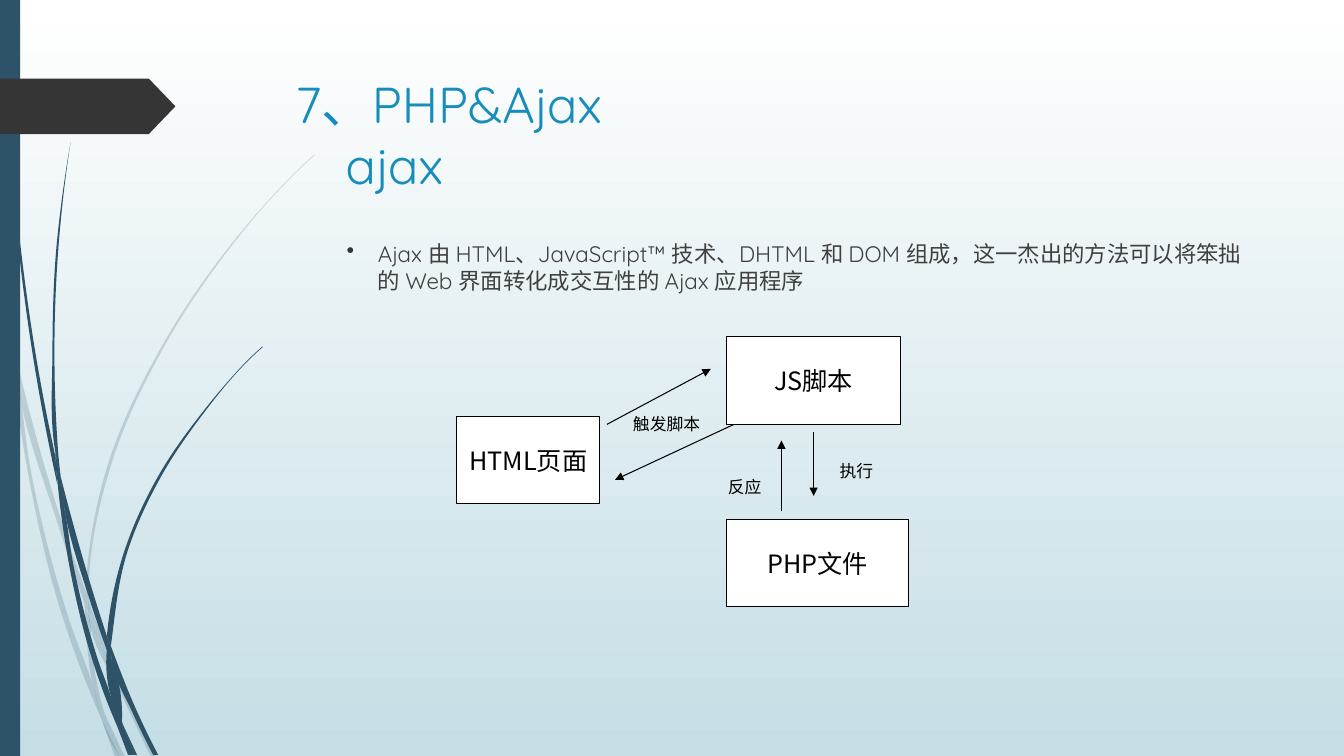
from dataclasses import dataclass
from math import dist

from lxml.etree import SubElement
from pptx import Presentation
from pptx.dml.color import RGBColor as Rgb
from pptx.enum.shapes import MSO_SHAPE as Kind
from pptx.enum.text import MSO_ANCHOR as Anchor, PP_ALIGN as Align
from pptx.oxml.ns import qn
from pptx.util import Inches, Pt

Point = tuple[float, float]
Edge = list[Point]


@dataclass(frozen=True)
class Theme:
    sky: str = "FFFFFF"
    haze: str = "C5DEE5"
    stem: str = "2E5369"
    tag: str = "353535"
    title: str = "178DBB"
    body: str = "404040"
    ink: str = "000000"
    paper: str = "FFFFFF"
    head: str = "Quicksand"
    sans: str = "Noto Sans CJK SC"
    big: int = 36
    mid: int = 18
    text: int = 16
    small: int = 12
    rule: float = 0.75
    pale: int = 20


@dataclass(frozen=True)
class Strand:
    out: Edge
    back: Edge


@dataclass(frozen=True)
class Box:
    text: str
    x: float
    y: float
    w: float
    h: float


@dataclass(frozen=True)
class Arrow:
    start: Point
    end: Point


LOOK = Theme()

# Each strand runs out along one edge and back along the other
PALE = [
    Strand([(0.11, 3.5), (0.09, 3.22), (0, 2.82)], [(0, 2.99), (0.1, 3.44), (0.11, 3.5)]),
    Strand([(0.14, 3.45), (0.17, 3.76), (0.58, 5.22), (0.84, 5.99)],
           [(0.85, 5.86), (0.62, 5.2), (0.14, 3.45)]),
    Strand([(0.88, 5.96), (0.88, 6.1), (1.23, 6.94), (1.5, 7.51)],
           [(1.55, 7.51), (1.27, 6.92), (0.92, 6.07), (0.88, 5.96)]),
    Strand([(1.05, 7.11), (1.19, 7.51)], [(1.24, 7.51), (1.05, 7.11)]),
    Strand([(0.11, 3.5), (0.28, 4.7), (0.65, 6.21), (0.92, 6.93), (1.01, 7.14)],
           [(0.99, 7.07), (0.93, 6.83), (0.7, 6.19), (0.31, 4.69), (0.17, 3.76), (0.11, 3.5)]),
    Strand([(0.84, 5.99), (0.87, 6.46), (0.93, 6.83), (0.96, 6.92), (1.05, 7.11)],
           [(1.03, 7.06), (0.91, 6.46), (0.88, 6.1), (0.84, 5.99)]),
    Strand([(3.12, 1.53), (2.89, 1.75), (2.68, 1.97), (2.28, 2.44), (1.58, 3.48), (1.07, 4.61),
            (0.85, 5.84)],
           [(0.88, 5.96), (0.88, 5.84), (1.1, 4.62), (1.6, 3.49), (2.29, 2.45), (2.68, 1.98),
            (2.9, 1.75), (3.12, 1.54)]),
    Strand([(1.01, 7.14), (1.14, 7.51)], [(1.19, 7.51), (1.01, 7.14)]),
    Strand([(0.88, 6.1), (0.88, 5.96), (0.85, 5.86)], [(0.84, 5.99), (0.88, 6.08)]),
    Strand([(0.93, 6.83), (0.99, 7.07), (1.01, 7.14), (1.19, 7.51)],
           [(1.05, 7.11), (0.96, 6.92), (0.93, 6.83)]),
]
DARK = [
    Strand([(0.03, 0), (0.04, 0.48), (0.07, 1.1), (0.17, 2.33), (0.33, 3.55), (0.57, 4.81)],
           [(0.55, 4.53), (0.36, 3.55), (0.19, 2.32), (0.08, 1.09), (0.05, 0.48), (0.04, 0)]),
    Strand([(0.6, 4.72), (0.64, 5.05), (0.88, 5.92), (1.06, 6.45)],
           [(1.06, 6.31), (0.93, 5.9), (0.6, 4.72)]),
    Strand([(1.1, 6.41), (1.11, 6.56), (1.32, 7.08), (1.52, 7.49)],
           [(1.57, 7.49), (1.36, 7.06), (1.13, 6.49), (1.1, 6.41)]),
    Strand([(0.57, 4.77), (0.68, 5.57), (0.93, 6.59), (1.11, 7.08), (1.17, 7.22)],
           [(1.16, 7.17), (1.1, 6.91), (0.98, 6.57), (0.72, 5.56), (0.64, 5.05), (0.57, 4.77)]),
    Strand([(0.7, 1.41), (0.62, 1.93), (0.56, 2.45), (0.52, 3.49), (0.55, 4.49), (0.6, 4.72)],
           [(0.58, 4.53), (0.54, 3.49), (0.58, 2.45), (0.63, 1.93), (0.7, 1.41)]),
    Strand([(1.22, 7.19), (1.33, 7.49)], [(1.36, 7.49), (1.22, 7.19)]),
    Strand([(0.55, 4.49), (0.57, 4.77), (0.64, 5.05)], [(0.6, 4.72), (0.55, 4.49)]),
    Strand([(2.6, 3.44), (2.45, 3.58), (2.31, 3.73), (2.04, 4.05), (1.56, 4.74), (1.22, 5.51),
            (1.06, 6.31)],
           [(1.1, 6.41), (1.11, 6.33), (1.25, 5.52), (1.58, 4.76), (2.05, 4.06), (2.31, 3.74),
            (2.45, 3.59), (2.61, 3.44)]),
    Strand([(1.17, 7.22), (1.27, 7.49)], [(1.31, 7.49), (1.17, 7.22)]),
    Strand([(1.06, 6.45), (1.1, 6.91), (1.22, 7.19)], [(1.21, 7.16), (1.11, 6.56), (1.06, 6.45)]),
    Strand([(1.06, 6.31), (1.06, 6.45), (1.11, 6.56)], [(1.1, 6.41), (1.06, 6.31)]),
    Strand([(1.1, 6.91), (1.17, 7.22), (1.3, 7.49)], [(1.33, 7.49), (1.22, 7.19), (1.1, 6.91)]),
]
BOXES = [Box("HTML页面", 4.53, 4.13, 1.42, 0.87), Box("JS脚本", 7.21, 3.34, 1.72, 0.87),
         Box("PHP文件", 7.21, 5.15, 1.8, 0.87)]
LABELS = [Box("触发脚本", 6.18, 4.06, 0.87, 0.3), Box("执行", 8.23, 4.52, 0.53, 0.3),
          Box("反应", 7.12, 4.68, 0.53, 0.3)]
ARROWS = [Arrow((6.02, 4.21), (7.05, 3.66)), Arrow((8.07, 4.29), (8.07, 4.92)),
          Arrow((7.75, 5.07), (7.75, 4.37)), Arrow((7.28, 4.21), (6.1, 4.76))]


def slopes(pts: Edge) -> Edge:
    """Give the tangent at each point, weighted by chord length."""
    gaps = [dist(p, q) for p, q in zip(pts, pts[1:])]
    runs = [((q[0] - p[0]) / g, (q[1] - p[1]) / g) for p, q, g in zip(pts, pts[1:], gaps)]
    mids = [tuple((a[i] * h + b[i] * g) / (g + h) for i in (0, 1))
            for a, b, g, h in zip(runs, runs[1:], gaps, gaps[1:])]
    if not mids:
        return runs * 2
    ends = [tuple(2 * r[i] - m[i] for i in (0, 1))
            for r, m in ((runs[0], mids[0]), (runs[-1], mids[-1]))]
    return [ends[0], *mids, ends[1]]


def paint(shape, fill: str, line: str | None = None) -> None:
    shape.shadow.inherit = False
    shape.fill.solid()
    shape.fill.fore_color.rgb = Rgb.from_string(fill)
    if line:
        shape.line.color.rgb = Rgb.from_string(line)
        shape.line.width = Pt(LOOK.rule)
    else:
        shape.line.fill.background()


def write(shape, text: str, *, size: int, font: str = LOOK.sans, color: str = LOOK.ink,
          align: Align = Align.LEFT, anchor: Anchor = Anchor.TOP, wrap: bool = False):
    frame = shape.text_frame
    frame.word_wrap, frame.vertical_anchor = wrap, anchor
    para = frame.paragraphs[0]
    para.text, para.alignment = text, align
    for run in para.runs:
        run.font.size, run.font.name = Pt(size), font
        run.font.color.rgb = Rgb.from_string(color)
        if font == LOOK.sans:
            SubElement(run.font._element, qn("a:ea"), typeface=font)
    return para


def area(box: Box) -> list[int]:
    return [Inches(v) for v in (box.x, box.y, box.w, box.h)]


def weave(slide, strand: Strand, alpha: int) -> None:
    dots = [(Inches(x), Inches(y)) for x, y in strand.out + strand.back]
    pen = slide.shapes.build_freeform(*dots[0])
    pen.add_line_segments(dots[1:], close=True)
    shape = pen.convert_to_shape()
    paint(shape, LOOK.stem)
    if alpha < 100:
        tint = shape._element.spPr.find(qn("a:solidFill"))[0]
        SubElement(tint, qn("a:alpha"), val=str(alpha * 1000))
    # Bend the straight segments along each edge
    track = next(shape._element.iter(qn("a:path")))
    lines = track.findall(qn("a:lnTo"))
    for edge, first in ((strand.out, 0), (strand.back, len(strand.out))):
        turns = slopes(edge)
        for k, (p, q, m, n) in enumerate(zip(edge, edge[1:], turns, turns[1:])):
            third = dist(p, q) / 3
            grips = [(p[0] + m[0] * third, p[1] + m[1] * third),
                     (q[0] - n[0] * third, q[1] - n[1] * third), q]
            line = lines[first + k]
            bend = SubElement(track, qn("a:cubicBezTo"))
            for x, y in grips:
                SubElement(bend, qn("a:pt"), x=str(Inches(x) - shape.left),
                           y=str(Inches(y) - shape.top))
            track.replace(line, bend)


def point(slide, arrow: Arrow) -> None:
    link = slide.shapes.add_connector(1, *[Inches(v) for v in arrow.start + arrow.end])
    link.line.color.rgb = Rgb.from_string(LOOK.ink)
    link.line.width = Pt(LOOK.rule)
    SubElement(link.line._get_or_add_ln(), qn("a:tailEnd"), type="triangle")
    SubElement(link._element.spPr, qn("a:effectLst"))


def backdrop(slide) -> None:
    back = slide.background.fill
    back.gradient()
    back.gradient_angle = 270
    for stop, tone in zip(back.gradient_stops, (LOOK.sky, LOOK.haze)):
        stop.color.rgb = Rgb.from_string(tone)
    for group, alpha in ((PALE, LOOK.pale), (DARK, 100)):
        for strand in group:
            weave(slide, strand, alpha)
    bar = slide.shapes.add_shape(Kind.RECTANGLE, *area(Box("", 0, 0, 0.2, 7.5)))
    paint(bar, LOOK.stem)
    tag = slide.shapes.add_shape(Kind.PENTAGON, *area(Box("", 0, 0.78, 1.74, 0.55)))
    tag.adjustments[0] = 0.48
    paint(tag, LOOK.tag)


def main() -> None:
    deck = Presentation()
    deck.slide_width, deck.slide_height = Inches(13.33), Inches(7.5)
    slide = deck.slides.add_slide(deck.slide_layouts[6])
    shapes = slide.shapes
    backdrop(slide)

    # Title
    title = Box("7、PHP&Ajax\v\tajax", 2.83, 0.68, 9.75, 1.4)
    para = write(shapes.add_textbox(*area(title)), title.text, size=LOOK.big,
                 font=LOOK.head, color=LOOK.title, wrap=True)
    tabs = SubElement(para._p.get_or_add_pPr(), qn("a:tabLst"))
    SubElement(tabs, qn("a:tab"), pos=str(Inches(0.5)), algn="l")

    # Bullet
    body = Box("Ajax 由 HTML、JavaScript™ 技术、DHTML 和 DOM 组成，这一杰出的方法可以将"
               "笨拙的 Web 界面转化成交互性的 Ajax 应用程序", 2.84, 2.33, 9.75, 4.13)
    para = write(shapes.add_textbox(*area(body)), body.text, size=LOOK.text,
                 font=LOOK.head, color=LOOK.body, wrap=True)
    para.space_before = Pt(10)
    props = para._p.get_or_add_pPr()
    props.set("marL", str(Inches(0.81)))
    props.set("indent", str(Inches(-0.31)))
    SubElement(SubElement(props, qn("a:buClr")), qn("a:srgbClr"), val=LOOK.tag)
    SubElement(props, qn("a:buChar"), char="•")

    # Diagram
    for box in BOXES:
        shape = shapes.add_shape(Kind.RECTANGLE, *area(box))
        paint(shape, LOOK.paper, LOOK.ink)
        write(shape, box.text, size=LOOK.mid, align=Align.CENTER, anchor=Anchor.MIDDLE)
    for arrow in ARROWS:
        point(slide, arrow)
    for label in LABELS:
        write(shapes.add_textbox(*area(label)), label.text, size=LOOK.small)
    deck.save("out.pptx")


if __name__ == "__main__":
    main()
